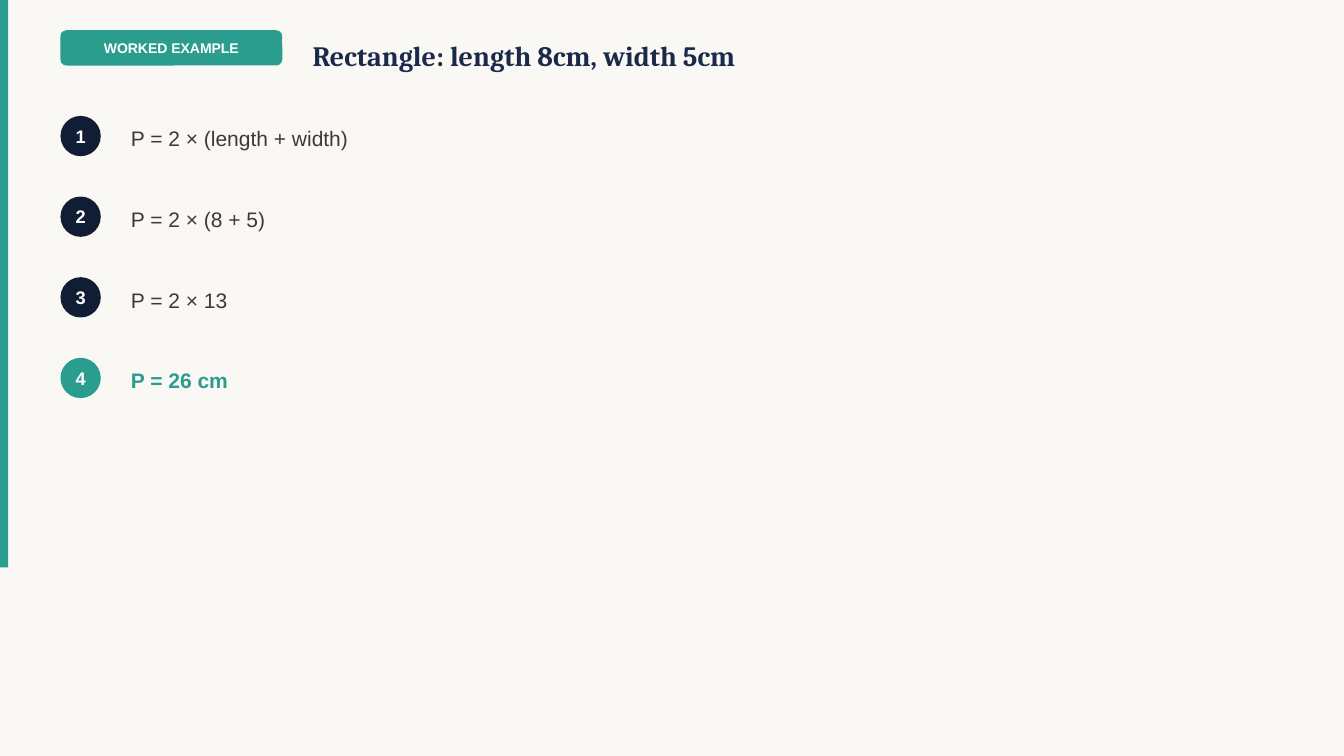
"""Build a worked-example slide on the perimeter of a rectangle."""
import pptx
import pptx.util
import pptx.dml.color
import pptx.enum.shapes
import pptx.enum.text

Inches = pptx.util.Inches
SHAPE = pptx.enum.shapes.MSO_SHAPE
ALIGN = pptx.enum.text.PP_ALIGN
COLORS = {
    "paper": "FAF8F5",
    "teal": "2A9D8F",
    "navy": "1B2A4A",
    "night": "111D35",
    "ink": "3D3A36",
    "white": "FFFFFF",
}


def rgb(name):
    return pptx.dml.color.RGBColor.from_string(COLORS[name])


def write(sp, text, size, color, font="Arial", bold=True, align=ALIGN.LEFT, inset=0.1):
    tf = sp.text_frame
    tf.word_wrap = True
    tf.auto_size = pptx.enum.text.MSO_AUTO_SIZE.NONE
    tf.vertical_anchor = pptx.enum.text.MSO_ANCHOR.MIDDLE
    tf.margin_left = tf.margin_right = Inches(inset)
    tf.margin_top = tf.margin_bottom = Inches(inset / 2)
    p = tf.paragraphs[0]
    p.alignment = align
    r = p.add_run()
    r.text = text
    r.font.name = font
    r.font.size = pptx.util.Pt(size)
    r.font.bold = bold
    r.font.color.rgb = rgb(color)


prs = pptx.Presentation()
prs.slide_width, prs.slide_height = Inches(13.33), Inches(7.5)
s = prs.slides.add_slide(prs.slide_layouts[5])
s.background.fill.solid()
s.background.fill.fore_color.rgb = rgb("paper")

title = s.shapes.title
title.left, title.top = Inches(3), Inches(0.3)
title.width, title.height = Inches(8), Inches(0.5)
write(title, "Rectangle: length 8cm, width 5cm", 20, "navy", font="Cambria")

steps = ["P = 2 × (length + width)", "P = 2 × (8 + 5)", "P = 2 × 13", "P = 26 cm"]
first_top, pitch = 1.15, 0.8

blocks = [
    (SHAPE.RECTANGLE, 0, 0, 0.08, 5.63, "teal", "", 10),
    (SHAPE.ROUNDED_RECTANGLE, 0.6, 0.3, 2.2, 0.35, "teal", "WORKED EXAMPLE", 10),
]
for i, step in enumerate(steps):
    top = first_top + i * pitch
    is_answer = i == len(steps) - 1
    fill = "teal" if is_answer else "night"
    blocks.append((SHAPE.OVAL, 0.6, top, 0.4, 0.4, fill, str(i + 1), 13))
    tb = s.shapes.add_textbox(Inches(1.2), Inches(top - 0.05), Inches(10.5), Inches(0.55))
    write(tb, step, 15, "teal" if is_answer else "ink", bold=is_answer)

for kind, left, top, width, height, fill, label, size in blocks:
    sp = s.shapes.add_shape(kind, Inches(left), Inches(top), Inches(width), Inches(height))
    sp.shadow.inherit = False
    sp.fill.solid()
    sp.fill.fore_color.rgb = rgb(fill)
    sp.line.fill.background()
    if kind == SHAPE.ROUNDED_RECTANGLE:
        sp.adjustments[0] = 0.17
    if label:
        write(sp, label, size, "white", align=ALIGN.CENTER, inset=0)

prs.save("out.pptx")
